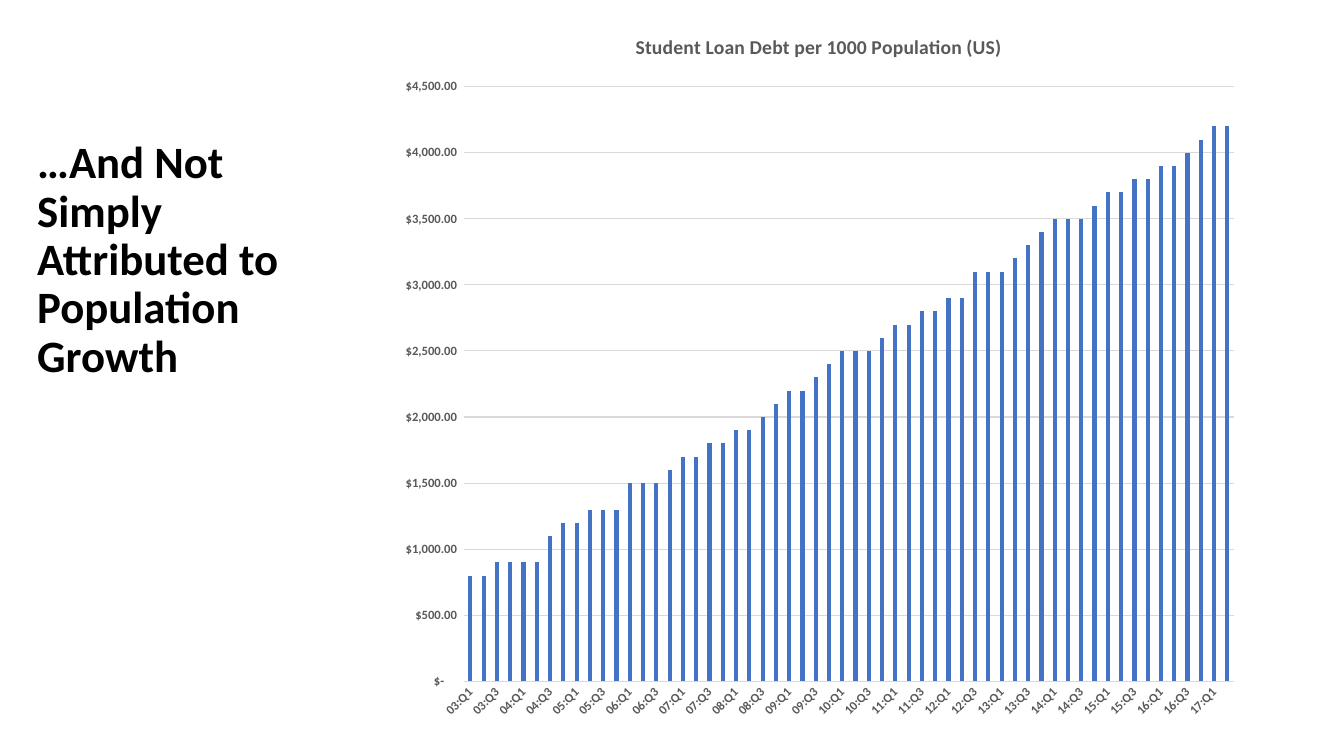
from pptx import Presentation
from pptx.chart.data import CategoryChartData
from pptx.dml.color import RGBColor
from pptx.enum.chart import XL_CHART_TYPE as ChartType, XL_TICK_MARK as TickMark
from pptx.oxml import parse_xml
from pptx.oxml.ns import nsdecls, qn
from pptx.util import Inches, Pt

BLACK = RGBColor(0x00, 0x00, 0x00)
GRAY = RGBColor(0x59, 0x59, 0x59)
RULE = RGBColor(0xD9, 0xD9, 0xD9)
BLUE = RGBColor(0x44, 0x72, 0xC4)
FONT = "Calibri"
DOLLARS = '_("$"* #,##0.00_);_("$"* \\(#,##0.00\\);_("$"* "-"??_);_(@_)'
DEBT = [
    800, 800, 900, 900, 900, 900, 1100, 1200,
    1200, 1300, 1300, 1300, 1500, 1500, 1500, 1600,
    1700, 1700, 1800, 1800, 1900, 1900, 2000, 2100,
    2200, 2200, 2300, 2400, 2500, 2500, 2500, 2600,
    2700, 2700, 2800, 2800, 2900, 2900, 3100, 3100,
    3100, 3200, 3300, 3400, 3500, 3500, 3500, 3600,
    3700, 3700, 3800, 3800, 3900, 3900, 4000, 4100,
    4200, 4200,
]
QUARTERS = [f"{3 + i // 4:02d}:Q{i % 4 + 1}" for i in range(len(DEBT))]


def style_font(font, size, color):
    font.name = FONT
    font.size = Pt(size)
    font.bold = True
    font.color.rgb = color


def set_layout(element, position, **fractions):
    for old in element.findall(qn("c:layout")):
        element.remove(old)
    target = '<c:layoutTarget val="inner"/>' if "w" in fractions else ""
    modes = "".join(f'<c:{key}Mode val="edge"/>' for key in "xy")
    values = "".join(f'<c:{key} val="{value}"/>' for key, value in fractions.items())
    element.insert(position, parse_xml(
        f'<c:layout {nsdecls("c")}><c:manualLayout>{target}{modes}{values}'
        '</c:manualLayout></c:layout>'))


def style_axis(axis):
    axis.major_tick_mark = axis.minor_tick_mark = TickMark.NONE
    style_font(axis.tick_labels.font, 9, GRAY)


def add_debt_chart(slide, left, top, width, height):
    data = CategoryChartData()
    data.categories = QUARTERS
    data.add_series("Series 1", DEBT)
    chart = slide.shapes.add_chart(
        ChartType.COLUMN_CLUSTERED, left, top, width, height, data).chart
    chart.font.name = FONT
    chart.font.size = Pt(10)
    chart.font.color.rgb = BLACK
    chart.has_legend = False

    chart.has_title = True
    title = chart.chart_title
    para = title.text_frame.paragraphs[0]
    para.text = "Student Loan Debt per 1000 Population (US)"
    style_font(para.font, 14, GRAY)
    set_layout(title._element, 1, x=Inches(2.44) / width, y=Inches(0.2) / height)
    plot_area = chart._chartSpace.find(f'{qn("c:chart")}/{qn("c:plotArea")}')
    set_layout(plot_area, 0, x=Inches(0.77) / width, y=Inches(0.77) / height,
               w=Inches(7.64) / width, h=Inches(5.9) / height)

    plot = chart.plots[0]
    plot.gap_width = 219
    plot.overlap = -27
    plot.vary_by_categories = False
    fill = plot.series[0].format.fill
    fill.solid()
    fill.fore_color.rgb = BLUE

    quarters = chart.category_axis
    style_axis(quarters)
    quarters.format.line.color.rgb = RULE
    quarters.format.line.width = Pt(0.75)
    label_body = quarters._element.find(f'{qn("c:txPr")}/{qn("a:bodyPr")}')
    label_body.set("rot", "-2700000")
    label_body.set("vert", "horz")

    dollars = chart.value_axis
    style_axis(dollars)
    dollars.minimum_scale = 0
    dollars.maximum_scale = 4500
    dollars.major_unit = 500
    dollars.tick_labels.number_format = DOLLARS
    dollars.tick_labels.number_format_is_linked = False
    dollars.format.line.fill.background()
    grid = dollars.major_gridlines.format.line
    grid.color.rgb = RULE
    grid.width = Pt(0.75)


def add_headline(slide, left, top, width, height):
    frame = slide.shapes.add_textbox(left, top, width, height).text_frame
    frame.word_wrap = True
    para = frame.paragraphs[0]
    para.text = "…And Not Simply Attributed to Population Growth"
    para.line_spacing = 0.9
    style_font(para.font, 32, BLACK)


def main():
    deck = Presentation()
    deck.slide_width = Inches(13.33)
    deck.slide_height = Inches(7.5)
    slide = deck.slides.add_slide(deck.slide_layouts[6])
    add_debt_chart(slide, Inches(3.83), Inches(0.09), Inches(8.59), Inches(7.18))
    add_headline(slide, Inches(0.27), Inches(1.34), Inches(3.02), Inches(4.17))
    deck.save("out.pptx")


if __name__ == "__main__":
    main()
